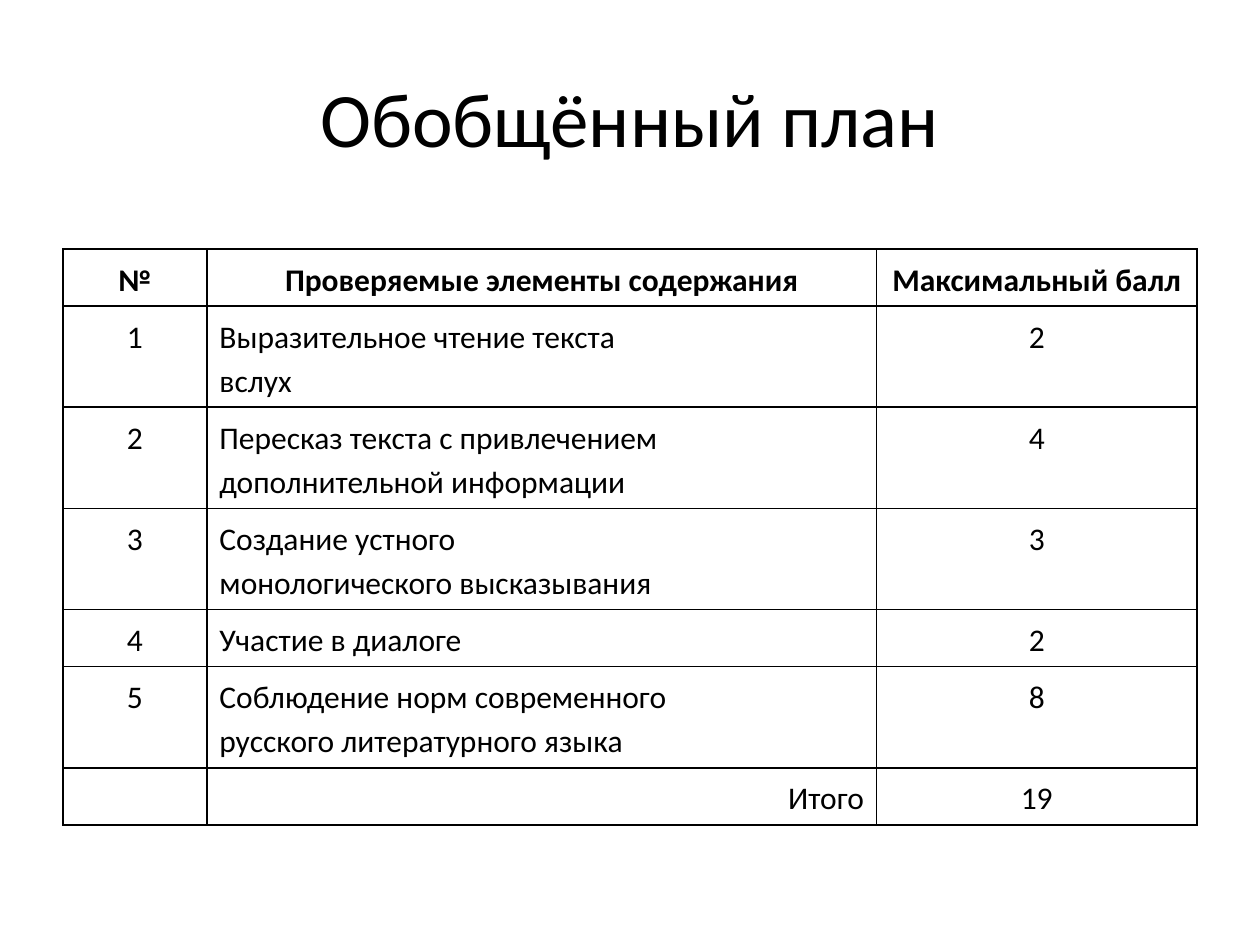
from lxml import etree
from pptx import Presentation
from pptx import util as u
from pptx.dml.color import RGBColor
from pptx.enum import text
from pptx.oxml.ns import qn

Cm = u.Cm
CENTER, LEFT, RIGHT = text.PP_ALIGN.CENTER, text.PP_ALIGN.LEFT, text.PP_ALIGN.RIGHT

# Content: number, tested elements (one string per line), points
HEADER = ("№", ["Проверяемые элементы содержания"], "Максимальный балл")
TASKS = [
    ("1", ["Выразительное чтение текста", "вслух"], "2"),
    ("2", ["Пересказ текста с привлечением", "дополнительной информации"], "4"),
    ("3", ["Создание устного", "монологического высказывания"], "3"),
    ("4", ["Участие в диалоге"], "2"),
    ("5", ["Соблюдение норм современного", "русского литературного языка"], "8"),
]
TOTAL = ("", ["Итого"], "19")


def color(hex_code):
    return RGBColor.from_string(hex_code)


class PlanSlide:
    font, ink = "Calibri", "000000"
    title_size, body_size = 44, 18
    line_spacing, border = 1.15, 1
    column_widths = (2.9, 13.5, 6.46)
    row_heights = {1: 1.15, 2: 2.04}  # by number of text lines

    def __init__(self, presentation):
        self.slide = presentation.slides.add_slide(presentation.slide_layouts[6])

    def add_lines(self, frame, lines, size, align, bold=False, spacing=None):
        for i, line in enumerate(lines):
            paragraph = frame.paragraphs[0] if i == 0 else frame.add_paragraph()
            paragraph.alignment = align
            paragraph.line_spacing = spacing
            if line:
                run = paragraph.add_run()
                run.text = line
                run.font.name = self.font
                run.font.size = u.Pt(size)
                run.font.bold = bold
                run.font.color.rgb = color(self.ink)

    def title(self, wording, left, top, width, height):
        box = self.slide.shapes.add_textbox(Cm(left), Cm(top), Cm(width), Cm(height))
        frame = box.text_frame
        frame.word_wrap = True
        frame.vertical_anchor = text.MSO_ANCHOR.MIDDLE
        self.add_lines(frame, [wording], self.title_size, CENTER)

    def outline(self, cell):
        properties = cell._tc.get_or_add_tcPr()
        for side in ("a:lnL", "a:lnR", "a:lnT", "a:lnB"):
            line = etree.SubElement(properties, qn(side), w=str(u.Pt(self.border)))
            fill = etree.SubElement(line, qn("a:solidFill"))
            etree.SubElement(fill, qn("a:srgbClr"), val=self.ink)

    def cell(self, cell, lines, align, bold):
        self.outline(cell)
        cell.fill.background()
        self.add_lines(cell.text_frame, lines, self.body_size, align, bold, self.line_spacing)

    def table(self, rows, left, top):
        heights = [self.row_heights[len(elements)] for _, elements, _ in rows]
        plan = self.slide.shapes.add_table(
            len(rows), len(self.column_widths), Cm(left), Cm(top),
            Cm(sum(self.column_widths)), Cm(sum(heights))).table
        plan.first_row = plan.horz_banding = False
        for column, width in zip(plan.columns, self.column_widths):
            column.width = Cm(width)
        for row, height, (number, elements, points) in zip(plan.rows, heights, rows):
            row.height = Cm(height)
            is_header = number == HEADER[0]
            element_align = CENTER if is_header else LEFT if number else RIGHT
            contents = (([number], CENTER), (elements, element_align), ([points], CENTER))
            for cell, (lines, align) in zip(row.cells, contents):
                self.cell(cell, lines, align, is_header)


def main():
    presentation = Presentation()
    presentation.slide_width, presentation.slide_height = Cm(25.4), Cm(19.05)
    plan_slide = PlanSlide(presentation)

    # Heading
    plan_slide.title("Обобщённый план", 1.27, 0.76, 22.86, 3.18)

    # Plan with maximum points
    plan_slide.table([HEADER, *TASKS, TOTAL], 1.27, 5.02)

    presentation.save("out.pptx")


if __name__ == "__main__":
    main()
